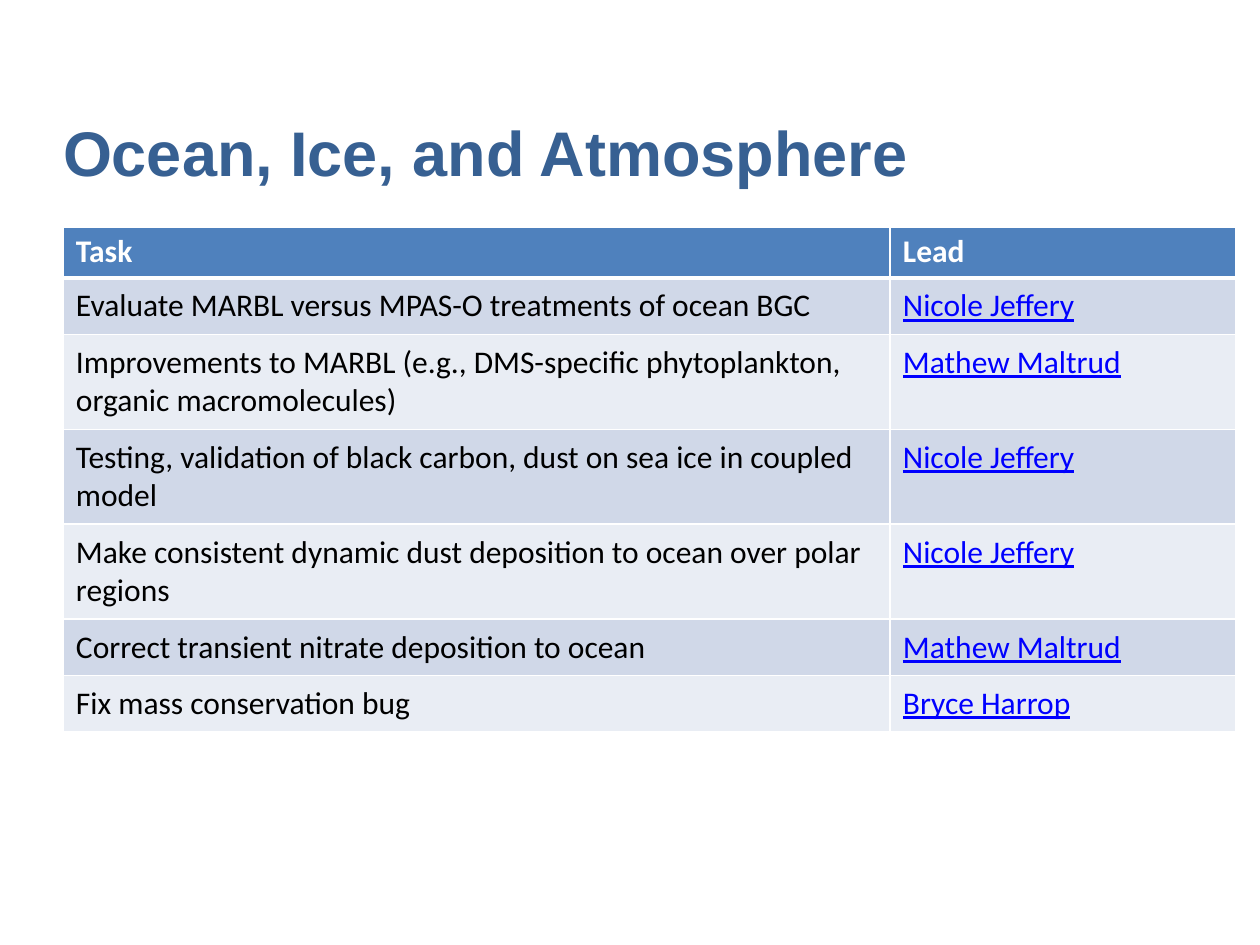
from lxml import etree
from pptx import Presentation
from pptx import util as u
from pptx.dml.color import RGBColor
from pptx.enum import text
from pptx.oxml.ns import qn

NAVY = RGBColor(0x37, 0x60, 0x92)
BLUE = RGBColor(0x4F, 0x81, 0xBD)
BAND_DARK = RGBColor(0xD0, 0xD8, 0xE8)
BAND_LIGHT = RGBColor(0xE9, 0xED, 0xF4)
LINK = RGBColor(0x00, 0x00, 0xFF)
BLACK = RGBColor(0x00, 0x00, 0x00)
WHITE = RGBColor(0xFF, 0xFF, 0xFF)

TASKS = [
    ("Evaluate MARBL versus MPAS-O treatments of ocean BGC", "Nicole Jeffery"),
    ("Improvements to MARBL (e.g., DMS-specific phytoplankton, organic macromolecules)", "Mathew Maltrud"),
    ("Testing, validation of black carbon, dust on sea ice in coupled model", "Nicole Jeffery"),
    ("Make consistent dynamic dust deposition to ocean over polar regions", "Nicole Jeffery"),
    ("Correct transient nitrate deposition to ocean", "Mathew Maltrud"),
    ("Fix mass conservation bug", "Bryce Harrop"),
]


def px(length):
    return u.Emu(round(length * 914400 / 126))


def apply(target, **values):
    for name, value in values.items():
        setattr(target, name, value)


class SlideBuilder:
    heading = {"name": "Arial", "size": u.Pt(36), "bold": True}
    body = {"name": "Calibri", "size": u.Pt(18)}

    def __init__(self, page):
        self.page = page

    def label(self, frame, words, color, **style):
        para = frame.paragraphs[0]
        para.alignment = text.PP_ALIGN.LEFT
        span = para.add_run()
        span.text = words
        apply(span.font, **style)
        span.font.color.rgb = color

    def title(self, words, left, top, width, height):
        box = self.page.shapes.title
        apply(box, left=px(left), top=px(top), width=px(width), height=px(height))
        apply(box.text_frame, margin_left=0, margin_right=0, margin_top=0, margin_bottom=0,
              word_wrap=True, vertical_anchor=text.MSO_ANCHOR.BOTTOM)
        self.label(box.text_frame, words, NAVY, **self.heading)

    def borders(self, cell, **points):
        properties = cell._tc.get_or_add_tcPr()
        for index, (side, width) in enumerate(points.items()):
            line = etree.Element(qn(f"a:ln{side}"), w=str(u.Pt(width)))
            fill = etree.SubElement(line, qn("a:solidFill"))
            etree.SubElement(fill, qn("a:srgbClr"), val=str(WHITE))
            properties.insert(index, line)

    def cell(self, cell, words, fill, color, margin, top_line, bottom_line, **style):
        cell.fill.solid()
        cell.fill.fore_color.rgb = fill
        apply(cell, margin_left=px(13), margin_right=px(13),
              margin_top=px(margin), margin_bottom=px(margin))
        self.label(cell.text_frame, words, color, **self.body, **style)
        self.borders(cell, L=1, R=1, T=top_line, B=bottom_line)

    def table(self, header, rows, left, top, widths, row_height):
        count = len(rows) + 1
        frame = self.page.shapes.add_table(
            count, len(widths), px(left), px(top), px(sum(widths)), px(row_height * count))
        grid = frame.table
        for column, width in zip(grid.columns, widths):
            column.width = px(width)
        for column, words in enumerate(header):
            self.cell(grid.cell(0, column), words, BLUE, WHITE, 6, 1, 3, bold=True)
        for row, (task, lead) in enumerate(rows, 1):
            band = BAND_DARK if row % 2 else BAND_LIGHT
            top_line = 3 if row == 1 else 1
            self.cell(grid.cell(row, 0), task, band, BLACK, 9, top_line, 1, bold=False)
            self.cell(grid.cell(row, 1), lead, band, LINK, 9, top_line, 1,
                      bold=False, underline=True)


def main():
    deck = Presentation()
    apply(deck, slide_width=px(1260), slide_height=px(945))
    builder = SlideBuilder(deck.slides.add_slide(deck.slide_layouts[5]))
    builder.title("Ocean, Ice, and Atmosphere", 63, 38, 1134, 151)
    builder.table(("Task", "Lead"), TASKS, 63, 227, (827, 346), 51)
    deck.save("out.pptx")


if __name__ == "__main__":
    main()
